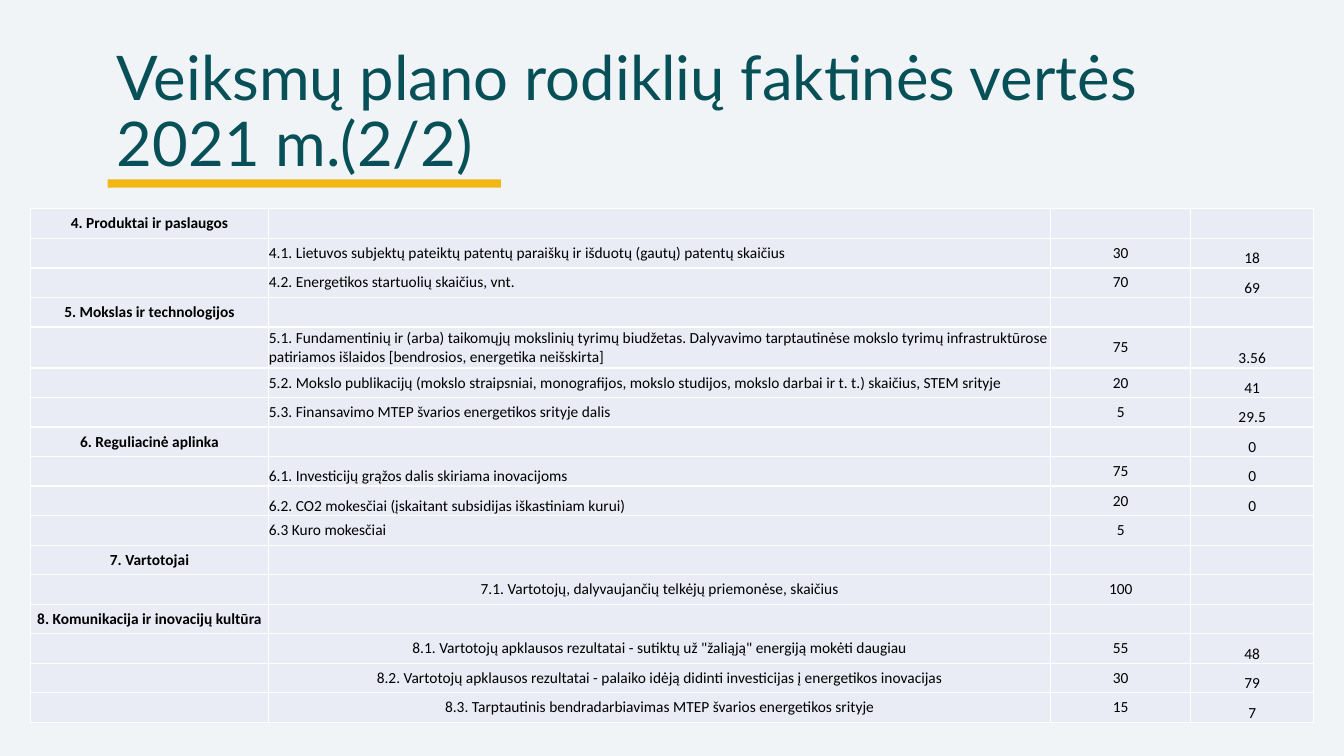
from dataclasses import dataclass

from lxml import etree
from pptx import Presentation
from pptx.dml.color import RGBColor
from pptx.enum.shapes import MSO_SHAPE
from pptx.enum.text import MSO_ANCHOR, MSO_AUTO_SIZE, PP_ALIGN
from pptx.oxml.ns import qn
from pptx.util import Pt

RECT = MSO_SHAPE.RECTANGLE
MID, LOW = MSO_ANCHOR.MIDDLE, MSO_ANCHOR.BOTTOM
LEFT, MIDST = PP_ALIGN.LEFT, PP_ALIGN.CENTER
FIXED = MSO_AUTO_SIZE.NONE
TITLE_ONLY = 5


@dataclass(frozen=True)
class Theme:
    back: str = "F0F4F7"
    head: str = "075057"
    gold: str = "F1B714"
    cell: str = "E9EBF5"
    rule: str = "FFFFFF"
    ink: str = "000000"
    head_font: str = "Lato"
    font: str = "Calibri"
    head_size: int = 44
    size: int = 11


def paint(fill, tint):
    fill.solid()
    fill.fore_color.rgb = RGBColor.from_string(tint)


def write(frame, text, *, font, size, tint, bold=False, align=LEFT, space=None):
    par = frame.paragraphs[0]
    par.alignment = align
    if space:
        par.line_spacing = space
    if not text:
        etree.SubElement(par._p, qn("a:endParaRPr"), sz=str(size * 100))
        return
    run = par.add_run()
    run.text = text
    run.font.name = font
    run.font.size = Pt(size)
    run.font.bold = bold
    run.font.color.rgb = RGBColor.from_string(tint)


class Page:
    def __init__(self, deck, theme):
        self.theme = theme
        self.slide = deck.slides.add_slide(deck.slide_layouts[TITLE_ONLY])
        paint(self.slide.background.fill, theme.back)

    def title(self, text, x, y, w, h):
        box = self.slide.shapes.title
        box.left, box.top, box.width, box.height = Pt(x), Pt(y), Pt(w), Pt(h)
        frame = box.text_frame
        frame.word_wrap = True
        frame.auto_size = FIXED
        frame.vertical_anchor = MID
        write(frame, text, font=self.theme.head_font, size=self.theme.head_size,
              tint=self.theme.head, space=0.9)

    def bar(self, x, y, w, h):
        shape = self.slide.shapes.add_shape(RECT, Pt(x), Pt(y), Pt(w), Pt(h))
        shape.shadow.inherit = False
        paint(shape.fill, self.theme.gold)
        shape.line.fill.background()

    def edge(self, cell):
        props = cell._tc.get_or_add_tcPr()
        for side in ("lnL", "lnR", "lnT", "lnB"):
            line = etree.SubElement(props, qn("a:" + side), w=str(Pt(1)))
            fill = etree.SubElement(line, qn("a:solidFill"))
            etree.SubElement(fill, qn("a:srgbClr"), val=self.theme.rule)

    def cell(self, cell, text, anchor, align, bold):
        cell.margin_left = cell.margin_right = 0
        cell.margin_top = cell.margin_bottom = 0
        cell.vertical_anchor = anchor
        self.edge(cell)
        paint(cell.fill, self.theme.cell)
        write(cell.text_frame, text, font=self.theme.font, size=self.theme.size,
              tint=self.theme.ink, bold=bold, align=align)

    def table(self, rows, x, y, widths, heights):
        grid = self.slide.shapes.add_table(
            len(rows), len(widths), Pt(x), Pt(y),
            Pt(sum(widths)), Pt(sum(heights))).table
        grid.first_row = grid.horz_banding = False
        for col, width in zip(grid.columns, widths):
            col.width = Pt(width)
        for row, height in zip(grid.rows, heights):
            row.height = Pt(height)
        for r, (group, name, goal, fact) in enumerate(rows):
            name_anchor = LOW if name.startswith(LOW_NAMES) else MID
            name_align = MIDST if name.startswith(MID_NAMES) else LEFT
            self.cell(grid.cell(r, 0), group, MID, MIDST, True)
            self.cell(grid.cell(r, 1), name, name_anchor, name_align, False)
            self.cell(grid.cell(r, 2), goal, MID, MIDST, False)
            self.cell(grid.cell(r, 3), fact, LOW, MIDST, False)


LOW_NAMES = ("6.1.", "6.2.")
MID_NAMES = ("7.", "8.")
ROWS = [
    ("4. Produktai ir paslaugos", "", "", ""),
    ("", "4.1. Lietuvos subjektų pateiktų patentų paraiškų ir išduotų (gautų) patentų skaičius", "30", "18"),
    ("", "4.2. Energetikos startuolių skaičius, vnt.", "70", "69"),
    ("5. Mokslas ir technologijos", "", "", ""),
    ("", "5.1. Fundamentinių ir (arba) taikomųjų mokslinių tyrimų biudžetas. "
         "Dalyvavimo tarptautinėse mokslo tyrimų infrastruktūrose patiriamos išlaidos "
         "[bendrosios, energetika neišskirta]", "75", "3.56"),
    ("", "5.2. Mokslo publikacijų (mokslo straipsniai, monografijos, mokslo studijos, "
         "mokslo darbai ir t. t.) skaičius, STEM srityje", "20", "41"),
    ("", "5.3. Finansavimo MTEP švarios energetikos srityje dalis", "5", "29.5"),
    ("6. Reguliacinė aplinka", "", "", "0"),
    ("", "6.1. Investicijų grąžos dalis skiriama inovacijoms", "75", "0"),
    ("", "6.2. CO2 mokesčiai (įskaitant subsidijas iškastiniam kurui)", "20", "0"),
    ("", "6.3 Kuro mokesčiai", "5", ""),
    ("7. Vartotojai", "", "", ""),
    ("", "7.1. Vartotojų, dalyvaujančių telkėjų priemonėse, skaičius", "100", ""),
    ("8. Komunikacija ir inovacijų kultūra", "", "", ""),
    ("", "8.1. Vartotojų apklausos rezultatai - sutiktų už \"žaliąją\" energiją mokėti daugiau", "55", "48"),
    ("", "8.2. Vartotojų apklausos rezultatai - palaiko idėją didinti investicijas "
         "į energetikos inovacijas", "30", "79"),
    ("", "8.3. Tarptautinis bendradarbiavimas MTEP švarios energetikos srityje", "15", "7"),
]


def main():
    deck = Presentation()
    deck.slide_width, deck.slide_height = Pt(960), Pt(540)
    page = Page(deck, Theme())
    page.bar(77, 128.2, 280.8, 5.8)
    page.title("Veiksmų plano rodiklių faktinės vertės 2021 m.(2/2)",
               76.3, 28.8, 754.6, 104.4)
    heights = [29.3 if row[1].startswith("5.1.") else 21.1 for row in ROWS]
    page.table(ROWS, 21.6, 149.2, [170.5, 558.5, 100, 87.8], heights)
    deck.save("out.pptx")


if __name__ == "__main__":
    main()
